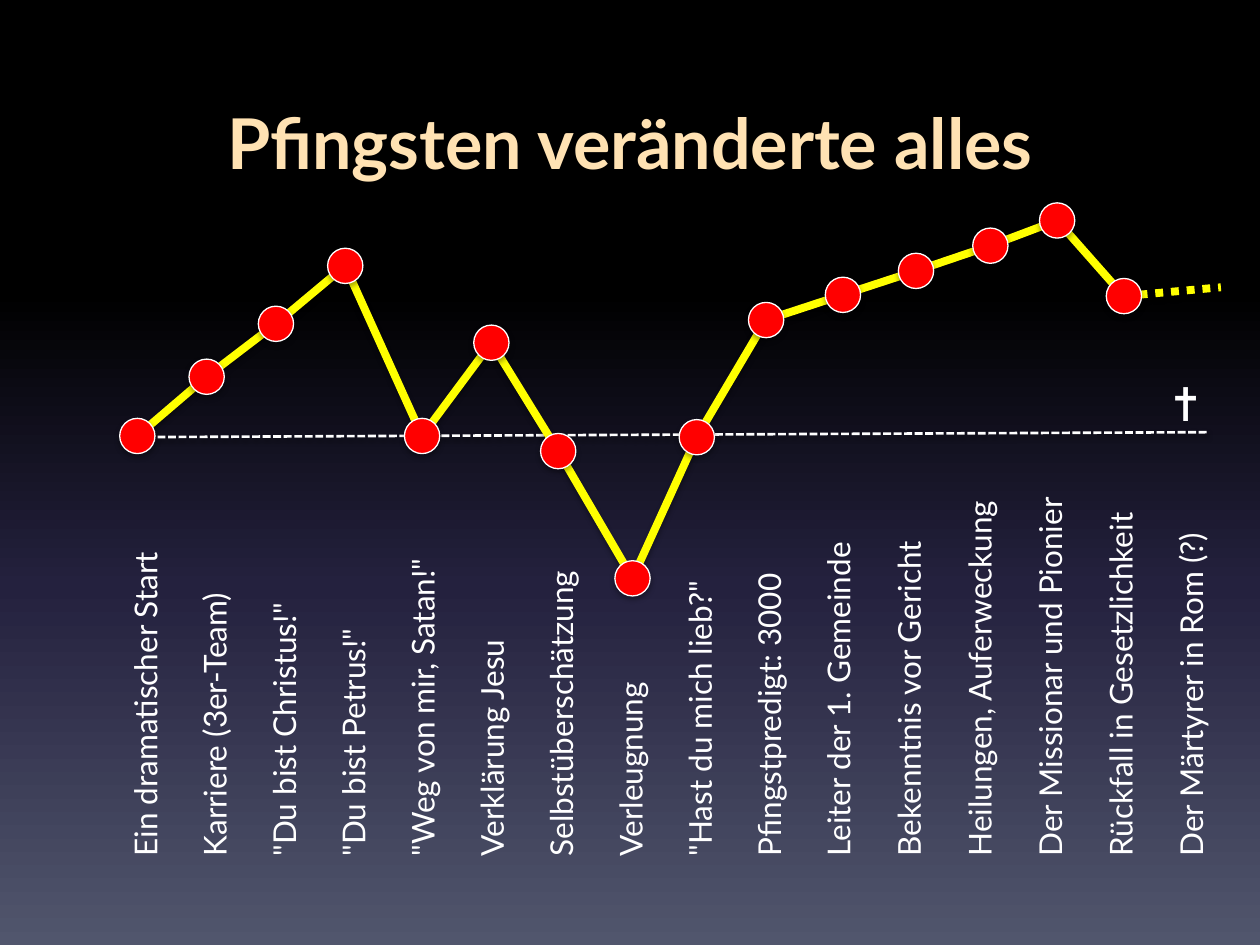
from lxml import etree
from pptx import Presentation
from pptx.dml.color import RGBColor
from pptx.enum.dml import MSO_LINE
from pptx.enum.shapes import MSO_CONNECTOR, MSO_SHAPE
from pptx.enum.text import MSO_AUTO_SIZE, PP_ALIGN
from pptx.oxml.ns import qn
from pptx.util import Inches, Pt

STRAIGHT = MSO_CONNECTOR.STRAIGHT
OVAL = MSO_SHAPE.OVAL
DASH, DOTS = MSO_LINE.SQUARE_DOT, MSO_LINE.ROUND_DOT
CENTER = PP_ALIGN.CENTER
GROW = MSO_AUTO_SIZE.SHAPE_TO_FIT_TEXT

WHITE = RGBColor(0xFF, 0xFF, 0xFF)
YELLOW = RGBColor(0xFF, 0xFF, 0x00)
RED = RGBColor(0xFF, 0x00, 0x00)
BLACK = RGBColor(0x00, 0x00, 0x00)
NIGHT = RGBColor(0x24, 0x21, 0x3E)
SLATE = RGBColor(0x51, 0x56, 0x6D)
CREAM = RGBColor(0xFF, 0xE9, 0xC7)
SAND = RGBColor(0xFF, 0xE2, 0xB3)
BRONZE = RGBColor(0x98, 0x6E, 0x00)

SKY = [(0, BLACK), (31, BLACK), (62, NIGHT), (100, SLATE)]
GOLD = [(0, CREAM), (9, SAND), (50, BRONZE), (79, SAND), (100, CREAM)]

COLUMNS = 100
FIRST_LABEL, LABEL_STEP, LABEL_MIDDLE = 11.5, 5.5, 53.2
STATIONS = [
    ("Ein dramatischer Start", 10.9, 34.6),
    ("Karriere (3er-Team)", 16.4, 29.9),
    ('"Du bist Christus!"', 21.9, 25.7),
    ('"Du bist Petrus!"', 27.4, 21.1),
    ('"Weg von mir, Satan!"', 33.5, 34.6),
    ("Verklärung Jesu", 39, 27.2),
    ("Selbstüberschätzung", 44.3, 35.8),
    ("Verleugnung", 50.2, 45.9),
    ('"Hast du mich lieb?"', 55.3, 34.7),
    ("Pfingstpredigt: 3000", 60.8, 25.4),
    ("Leiter der 1. Gemeinde", 66.9, 23.4),
    ("Bekenntnis vor Gericht", 72.7, 21.5),
    ("Heilungen, Auferweckung", 78.6, 19.5),
    ("Der Missionar und Pionier", 83.9, 17.5),
    ("Rückfall in Gesetzlichkeit", 89.2, 23.5),
    ("Der Märtyrer in Rom (?)", 96.9, 22.8),
]


class Deck:
    """Holds the style and the current slide; lengths are cells of a 100 by 75 grid."""

    def __init__(self, font="Lato"):
        self.prs = Presentation()
        self.prs.slide_width, self.prs.slide_height = Inches(10), Inches(7.5)
        self.cell = self.prs.slide_width // COLUMNS
        self.font = font
        self.s = self.prs.slides.add_slide(self.prs.slide_layouts[5])

    def grid(self, *cells):
        """Turn grid cells into lengths."""
        return [round(c * self.cell) for c in cells]

    def gradient(self, fill, stops):
        """Fill from top to bottom with the given stops."""
        fill.gradient()
        fill.gradient_angle = 270
        gs_list = fill.gradient_stops[0]._gs.getparent()
        for gs in list(gs_list):
            gs_list.remove(gs)
        for position, color in stops:
            gs = etree.SubElement(gs_list, qn("a:gs"), pos=str(position * 1000))
            etree.SubElement(gs, qn("a:srgbClr"), val=str(color))

    def shadow(self, sp, alpha):
        """Give a shape or connector a soft shadow below it."""
        effects = etree.SubElement(sp._element.spPr, qn("a:effectLst"))
        outer = etree.SubElement(effects, qn("a:outerShdw"), blurRad="40000",
                                 dist="21000", dir="5400000", rotWithShape="0")
        color = etree.SubElement(outer, qn("a:srgbClr"), val=str(BLACK))
        etree.SubElement(color, qn("a:alpha"), val=str(alpha * 1000))

    def run(self, tf, text, size):
        """Add one run and return it."""
        r = tf.paragraphs[0].add_run()
        r.text = text
        r.font.name, r.font.size = self.font, Pt(size)
        return r

    def title(self, text, x, y, w, h):
        """Place and fill the title."""
        sp = self.s.shapes.title
        sp.left, sp.top, sp.width, sp.height = self.grid(x, y, w, h)
        sp.text_frame.paragraphs[0].alignment = CENTER
        r = self.run(sp.text_frame, text, 40)
        r.font.bold = True
        self.gradient(r.font.fill, GOLD)

    def line(self, start, end, color, width, dash=None):
        """Draw a straight line between two points."""
        sp = self.s.shapes.add_connector(STRAIGHT, *self.grid(*start, *end))
        sp.line.color.rgb, sp.line.width = color, Pt(width)
        if dash:
            sp.line.dash_style = dash
        self.shadow(sp, 38)

    def dot(self, x, y, size=2.8):
        """Draw a dot around its centre."""
        box = self.grid(x - size / 2, y - size / 2, size, size)
        sp = self.s.shapes.add_shape(OVAL, *box)
        sp.fill.solid()
        sp.fill.fore_color.rgb = RED
        sp.line.color.rgb, sp.line.width = WHITE, Pt(0.75)
        self.shadow(sp, 35)

    def label(self, text, x, y, w, h, size=18, rotation=0):
        """Set a text around its centre."""
        sp = self.s.shapes.add_textbox(*self.grid(x - w / 2, y - h / 2, w, h))
        sp.rotation = rotation
        tf = sp.text_frame
        tf.word_wrap, tf.auto_size = True, GROW
        self.run(tf, text, size).font.color.rgb = WHITE


def main():
    """Build the slide."""
    deck = Deck()
    deck.gradient(deck.s.background.fill, SKY)
    deck.title("Pfingsten veränderte alles", 5, 5, 90, 12.5)
    deck.line((10, 34.7), (95.9, 34.3), WHITE, 1.5, DASH)
    points = [(x, y) for _, x, y in STATIONS]
    for start, end in zip(points, points[1:]):
        deck.line(start, end, YELLOW, 4.5, DOTS if end == points[-1] else None)
    for point in points[:-1]:
        deck.dot(*point)
    for i, (text, _, _) in enumerate(STATIONS):
        x = FIRST_LABEL + i * LABEL_STEP + max(0, i - 10) * 0.1
        deck.label(text, x, LABEL_MIDDLE, 31.5, 4, rotation=270)
    deck.label("✝", 95.05, 31.95, 5.9, 5.7, size=28)
    deck.prs.save("out.pptx")


if __name__ == "__main__":
    main()
